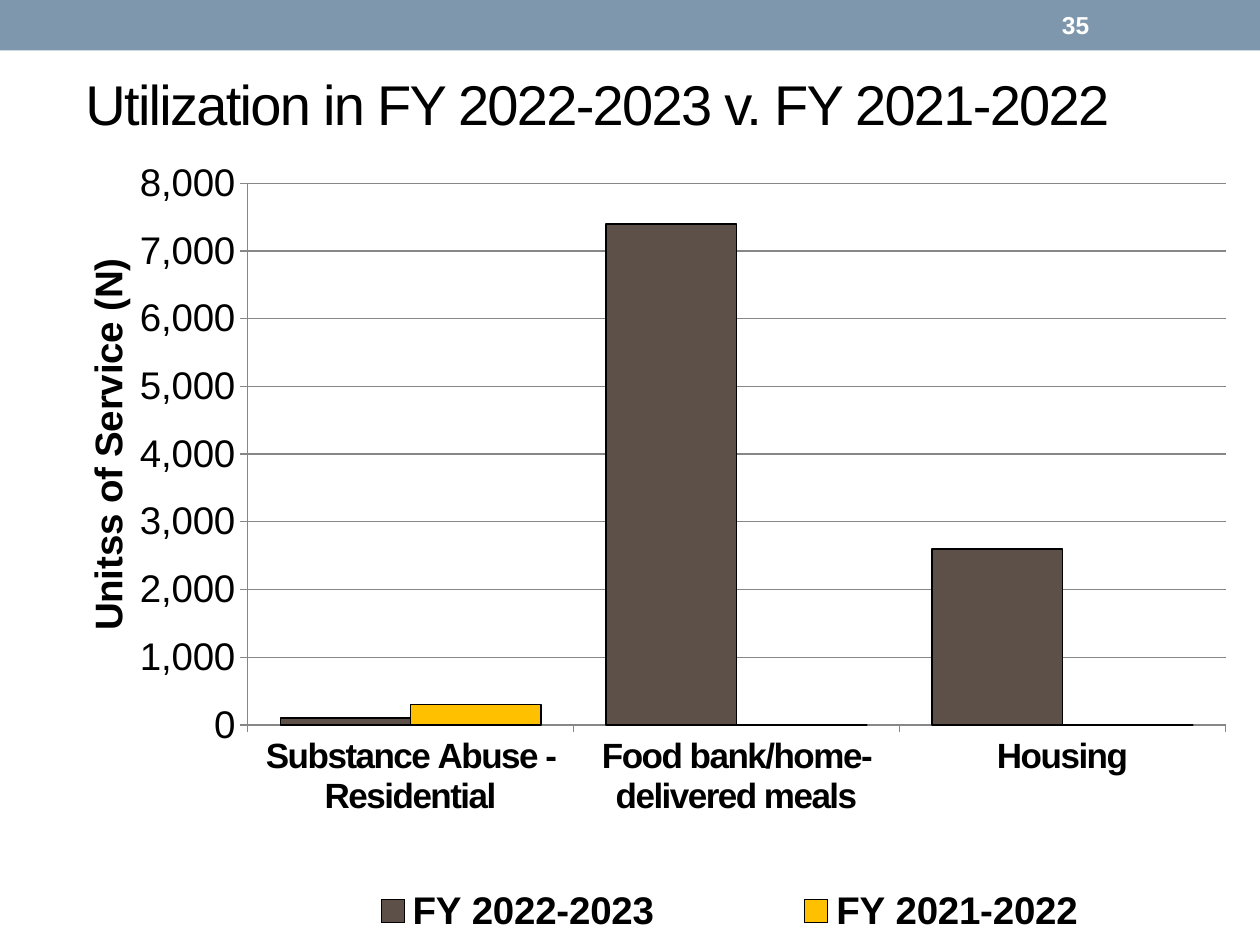
from lxml.etree import SubElement
from pptx import Presentation
from pptx.chart.data import CategoryChartData
from pptx.dml.color import RGBColor
from pptx.enum.chart import XL_CHART_TYPE, XL_LEGEND_POSITION, XL_TICK_MARK
from pptx.enum.shapes import MSO_SHAPE
from pptx.enum.text import MSO_ANCHOR
from pptx.oxml.ns import qn
from pptx.util import Inches, Pt

FONT = "Arial"
BLACK, WHITE, BAND, GRID = "000000", "FFFFFF", "7E97AD", "878787"
YEARS = {
    "FY 2022-2023": ((100, 7400, 2600), "5C5048"),
    "FY 2021-2022": ((300, 0, 0), "FFC000"),
}
SERVICES = ("Substance Abuse - Residential", "Food bank/home-delivered meals", "Housing")


def rgb(value):
    return RGBColor.from_string(value)


def style_font(font, size, color=BLACK, bold=False):
    font.name, font.size, font.bold = FONT, Pt(size), bold
    font.color.rgb = rgb(color)


def style_line(line, color):
    line.color.rgb = rgb(color)
    line.width = Pt(0.75)


def place(part, index, x, y, w=None, h=None, inner=False):
    for old in part.findall(qn("c:layout")):
        part.remove(old)
    layout = SubElement(part, qn("c:layout"))
    part.insert(index, layout)
    manual = SubElement(layout, qn("c:manualLayout"))
    settings = [("layoutTarget", "inner")] if inner else []
    settings += [("xMode", "edge"), ("yMode", "edge"), ("x", x), ("y", y)]
    settings += [("w", w), ("h", h)] if w else []
    for tag, value in settings:
        SubElement(manual, qn(f"c:{tag}")).set("val", str(value))


class SlideBuilder:
    """Holds the style and the current slide, and adds its elements."""

    def __init__(self, slide):
        self.slide = slide

    def band(self, x, y, w, h, color):
        band = self.slide.shapes.add_shape(
            MSO_SHAPE.RECTANGLE, Inches(x), Inches(y), Inches(w), Inches(h))
        band.shadow.inherit = False
        band.fill.solid()
        band.fill.fore_color.rgb = rgb(color)
        band.line.fill.background()

    def text(self, words, x, y, w, h, size, color=BLACK, bold=False, spacing=0):
        frame = self.slide.shapes.add_textbox(
            Inches(x), Inches(y), Inches(w), Inches(h)).text_frame
        frame.word_wrap = True
        frame.vertical_anchor = MSO_ANCHOR.MIDDLE
        frame.text = words
        font = frame.paragraphs[0].runs[0].font
        style_font(font, size, color, bold)
        if spacing:
            font._element.set("spc", str(spacing * 100))

    def columns(self, x, y, w, h, services, years, axis_name):
        data = CategoryChartData(number_format="#,##0")
        data.categories = services
        for year, (units, _) in years.items():
            data.add_series(year, units)
        chart = self.slide.shapes.add_chart(
            XL_CHART_TYPE.COLUMN_CLUSTERED,
            Inches(x), Inches(y), Inches(w), Inches(h), data).chart
        chart.has_title = False
        style_font(chart.font, 22)

        plot = chart.plots[0]
        plot.gap_width, plot.overlap, plot.vary_by_categories = 50, 0, False
        for series, (_, color) in zip(plot.series, years.values()):
            series.format.fill.solid()
            series.format.fill.fore_color.rgb = rgb(color)
            style_line(series.format.line, BLACK)

        self.axes(chart.category_axis, chart.value_axis, axis_name)
        chart.has_legend = True
        legend = chart.legend
        legend.position = XL_LEGEND_POSITION.BOTTOM
        legend.include_in_layout = False
        style_font(legend.font, 22, bold=True)
        place(legend._element, 1, 0.16, 0.92, 0.82, 0.08)
        plot_area = chart._chartSpace.chart.plotArea
        place(plot_area, 0, 0.164, 0.033, 0.824, 0.69, inner=True)

    def axes(self, service_axis, unit_axis, axis_name):
        for axis in (service_axis, unit_axis):
            axis.major_tick_mark = XL_TICK_MARK.OUTSIDE
            axis.minor_tick_mark = XL_TICK_MARK.NONE
            style_line(axis.format.line, GRID)
        style_font(service_axis.tick_labels.font, 20, bold=True)
        label_style = service_axis._element.find(qn("c:txPr"))
        label_style.find(qn("a:bodyPr")).set("rot", "0")
        for run_style in label_style.iter(qn("a:defRPr")):
            run_style.set("spc", "-100")

        style_font(unit_axis.tick_labels.font, 22)
        unit_axis.tick_labels.number_format = "#,##0"
        unit_axis.tick_labels.number_format_is_linked = False
        unit_axis.minimum_scale, unit_axis.maximum_scale = 0, 8000
        unit_axis.major_unit = 1000
        unit_axis.has_major_gridlines = True
        style_line(unit_axis.major_gridlines.format.line, GRID)
        caption = unit_axis.axis_title.text_frame
        caption.text = axis_name
        style_font(caption.paragraphs[0].runs[0].font, 22, bold=True)
        place(unit_axis.axis_title._element, 1, 0.02, 0.12)


def main():
    deck = Presentation()
    deck.slide_width, deck.slide_height = Inches(10), Inches(7.5)
    page = SlideBuilder(deck.slides.add_slide(deck.slide_layouts[6]))
    page.band(0, 0, 10, 0.4, BAND)
    page.text("Utilization in FY 2022-2023 v. FY 2021-2022",
              0.58, 0.38, 9, 0.87, 32, spacing=-1)
    page.text("35", 8.33, 0.02, 1.17, 0.36, 14, WHITE, bold=True)
    page.columns(0.42, 1.25, 9.42, 6.23, SERVICES, YEARS, "Unitss of Service (N)")
    deck.save("out.pptx")


if __name__ == "__main__":
    main()
